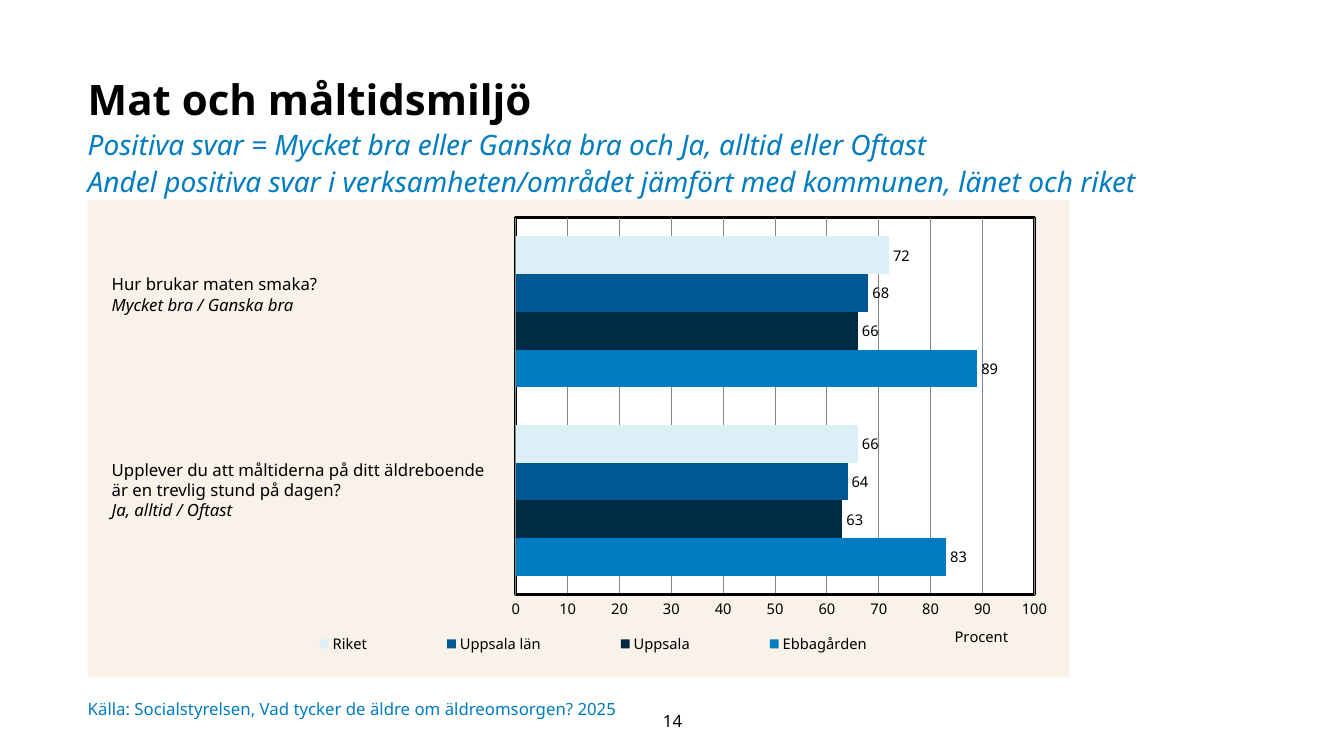
from lxml import etree
from pptx import Presentation, util as u
from pptx.chart.data import CategoryChartData
from pptx.dml.color import RGBColor
from pptx.enum import chart as ch, text
from pptx.oxml import parse_xml
from pptx.oxml.ns import nsdecls, qn

BLACK = RGBColor(0x00, 0x00, 0x00)
BLUE = RGBColor(0x01, 0x7C, 0xC1)
NAVY = RGBColor(0x00, 0x2B, 0x45)
MID_BLUE = RGBColor(0x00, 0x58, 0x92)
PALE_BLUE = RGBColor(0xDB, 0xF0, 0xF6)
CREAM = RGBColor(0xF8, 0xF2, 0xE8)
WHITE = RGBColor(0xFF, 0xFF, 0xFF)
GREY = RGBColor(0x86, 0x86, 0x86)

SERIES = [
    ("Ebbagården", (83, 89), BLUE),
    ("Uppsala", (63, 66), NAVY),
    ("Uppsala län", (64, 68), MID_BLUE),
    ("Riket", (66, 72), PALE_BLUE),
]
QUESTIONS = [
    (2.67, 2.56, ["Hur brukar maten smaka?"], "Mycket bra / Ganska bra"),
    (4.51, 4.47, ["Upplever du att måltiderna på ditt äldreboende",
                  "är en trevlig stund på dagen?"], "Ja, alltid / Oftast"),
]


def layout_xml(x, y, w=None, h=None, inner=False):
    """Return a manual chart layout in fractions of the chart area."""
    parts = '<c:layoutTarget val="inner"/>' if inner else ""
    parts += '<c:xMode val="edge"/><c:yMode val="edge"/>'
    for tag, value in zip("xywh", (x, y, w, h)):
        if value is not None:
            parts += f'<c:{tag} val="{value}"/>'
    return parse_xml(f'<c:layout {nsdecls("c")}><c:manualLayout>{parts}'
                     '</c:manualLayout></c:layout>')


def set_layout(parent, layout, before):
    """Replace the layout of a chart part, ahead of the first tag in before."""
    for old in parent.findall(qn("c:layout")):
        parent.remove(old)
    follower = next(child for child in parent
                    if child.tag in [qn(tag) for tag in before])
    follower.addprevious(layout)


class SlideBuilder:
    def __init__(self, deck, font="Noto Sans"):
        self.font = font
        self.page = deck.slides.add_slide(deck.slide_layouts[6])

    def style(self, font, size, color=BLACK, bold=False, italic=False):
        font.name, font.size = self.font, u.Pt(size)
        font.bold, font.italic = bold, italic
        font.color.rgb = color

    def text_box(self, at, lines, insets=(0.1, 0.05, 0.1, 0.05),
                 anchor=text.MSO_ANCHOR.TOP, align=None, spacing=None):
        """Add a box; each line is (wording, size, style options)."""
        box = self.page.shapes.add_textbox(*map(u.Inches, at))
        frame = box.text_frame
        frame.word_wrap = True
        frame.vertical_anchor = anchor
        (frame.margin_left, frame.margin_top,
         frame.margin_right, frame.margin_bottom) = map(u.Inches, insets)
        for index, (wording, size, options) in enumerate(lines):
            para = frame.add_paragraph() if index else frame.paragraphs[0]
            para.alignment, para.line_spacing = align, spacing
            span = para.add_run()
            span.text = wording
            self.style(span.font, size, **options)

    def bar_chart(self, at, series):
        data = CategoryChartData()
        data.categories = ["1", "2"]
        for name, values, _ in series:
            data.add_series(name, values)
        chart = self.page.shapes.add_chart(
            ch.XL_CHART_TYPE.BAR_CLUSTERED, *map(u.Inches, at), data).chart
        self.style(chart.font, 10.5)
        chart.has_title = False
        plot = chart.plots[0]
        plot.gap_width, plot.overlap, plot.vary_by_categories = 100, 0, False
        for bars, (_, _, color) in zip(plot.series, series):
            bars.format.fill.solid()
            bars.format.fill.fore_color.rgb = color
            labels = bars.data_labels
            labels.show_value = True
            labels.position = ch.XL_LABEL_POSITION.OUTSIDE_END
            self.style(labels.font, 10.5)
        self.axes(chart)
        self.legend(chart)
        self.backgrounds(chart)

    def axes(self, chart):
        chart.category_axis.visible = False
        axis = chart.value_axis
        axis.minimum_scale, axis.maximum_scale, axis.major_unit = 0, 100, 10
        axis.major_tick_mark = ch.XL_TICK_MARK.NONE
        axis.format.line.color.rgb = BLACK
        axis.format.line.width = u.Pt(2)
        axis.major_gridlines.format.line.color.rgb = GREY
        axis.major_gridlines.format.line.width = u.Pt(0.75)
        self.style(axis.tick_labels.font, 10.5)
        span = axis.axis_title.text_frame.paragraphs[0].add_run()
        span.text = "Procent"
        self.style(span.font, 10.5)
        set_layout(axis.axis_title._element, layout_xml(0.88, 0.885), ["c:overlay"])

    def legend(self, chart):
        chart.has_legend = True
        legend = chart.legend
        legend.position = ch.XL_LEGEND_POSITION.BOTTOM
        legend.include_in_layout = False
        self.style(legend.font, 10.5)
        set_layout(legend._element, layout_xml(0.16, 0.9, 0.71, 0.06), ["c:overlay"])

    def backgrounds(self, chart):
        """Fill the chart area and the framed plot area."""
        def fill(color, line):
            return parse_xml(
                f'<c:spPr {nsdecls("c", "a")}><a:solidFill><a:srgbClr val="{color}"/>'
                f'</a:solidFill>{line}</c:spPr>')

        space = chart._chartSpace
        space.find(qn("c:chart")).addnext(
            fill(CREAM, "<a:ln><a:noFill/></a:ln>"))
        area = space.find(qn("c:chart")).find(qn("c:plotArea"))
        set_layout(area, layout_xml(0.436, 0.038, 0.528, 0.789, True), ["c:barChart"])
        area.append(fill(WHITE, f'<a:ln w="{u.Pt(2)}"><a:solidFill>'
                                f'<a:srgbClr val="{BLACK}"/></a:solidFill></a:ln>'))


def main():
    deck = Presentation()
    deck.slide_width, deck.slide_height = u.Inches(13.33), u.Inches(7.5)
    slide = SlideBuilder(deck)
    subtitle = {"color": BLUE, "italic": True}
    slide.text_box((0.87, 0.68, 10.73, 0.49), [
        ("Mat och måltidsmiljö", 30, {"bold": True}),
        ("Positiva svar = Mycket bra eller Ganska bra och Ja, alltid eller Oftast",
         20, subtitle),
        ("Andel positiva svar i verksamheten/området jämfört med kommunen, "
         "länet och riket", 20, subtitle),
    ], insets=(0, 0, 0.1, 0.05), spacing=1.1)
    slide.bar_chart((0.87, 1.98, 9.74, 4.74), SERIES)
    for top, width, question, answers in QUESTIONS:
        lines = [(line, 12, {}) for line in question]
        lines.append((answers, 12, {"italic": True}))
        slide.text_box((1.01, top, width, 0.28 + 0.2 * len(lines)), lines)
    middle = text.MSO_ANCHOR.MIDDLE
    slide.text_box((0.87, 6.89, 8.99, 0.29), [
        ("Källa: Socialstyrelsen, Vad tycker de äldre om äldreomsorgen? 2025",
         12, {"color": BLUE})], insets=(0, 0, 0, 0), anchor=middle)
    slide.text_box((6.16, 6.95, 1.02, 0.4), [("14", 12, {})],
                   anchor=middle, align=text.PP_ALIGN.CENTER)
    deck.save("out.pptx")


if __name__ == "__main__":
    main()
